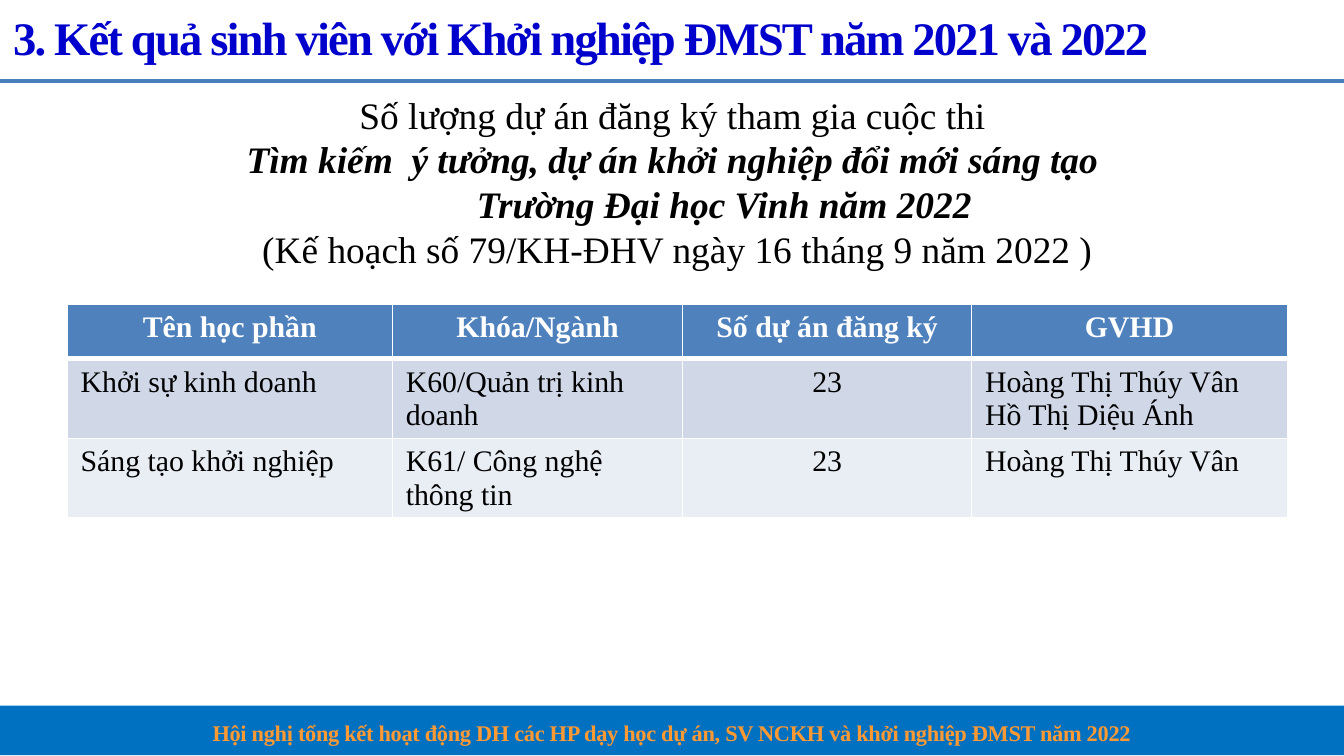
from dataclasses import dataclass

from lxml.etree import SubElement
from pptx import Presentation
from pptx.dml.color import RGBColor
from pptx.enum.shapes import MSO_CONNECTOR, MSO_SHAPE
from pptx.enum.text import MSO_ANCHOR, PP_ALIGN
from pptx.oxml.ns import qn
from pptx.util import Inches, Pt


@dataclass(frozen=True)
class Theme:
    font: str = "Times New Roman"
    title: str = "0000CC"
    rule: str = "4B7EBC"
    band: str = "0070C0"
    footer: str = "FF9933"
    ink: str = "000000"
    white: str = "FFFFFF"
    header: str = "4F81BD"
    stripes: tuple = ("D0D8E8", "E9EDF4")
    title_size: float = 25
    intro_size: float = 20
    table_size: float = 16
    footer_size: float = 12


class SlideBuilder:
    def __init__(self, slide, theme):
        self.slide = slide
        self.theme = theme

    def style(self, paragraph, size, color, bold=False, italic=False, spacing=0):
        for run in paragraph.runs:
            font = run.font
            font.name, font.size = self.theme.font, Pt(size)
            font.bold, font.italic = bold, italic
            font.color.rgb = RGBColor.from_string(color)
            if spacing:
                run._r.get_or_add_rPr().set("spc", str(round(spacing * 100)))

    def band(self, left, top, width, height, color):
        band = self.slide.shapes.add_shape(
            MSO_SHAPE.RECTANGLE, Inches(left), Inches(top), Inches(width), Inches(height))
        band.shadow.inherit = False
        band.fill.solid()
        band.fill.fore_color.rgb = RGBColor.from_string(color)
        band.line.fill.background()

    def rule(self, left, right, y, color, weight):
        rule = self.slide.shapes.add_connector(
            MSO_CONNECTOR.STRAIGHT, Inches(left), Inches(y), Inches(right), Inches(y))
        rule.line.color.rgb = RGBColor.from_string(color)
        rule.line.width = Pt(weight)
        SubElement(rule._element.spPr, qn("a:effectLst"))

    def text(self, box, lines, size, color, align=PP_ALIGN.LEFT,
             anchor=MSO_ANCHOR.MIDDLE, line_spacing=1.0, spacing=0):
        """Each line is (wording, emphasised, left margin in inches)."""
        frame = self.slide.shapes.add_textbox(*map(Inches, box)).text_frame
        frame.word_wrap = True
        frame.vertical_anchor = anchor
        frame.text = "\n".join(wording for wording, _, _ in lines)
        for paragraph, (_, emphasis, margin) in zip(frame.paragraphs, lines):
            paragraph.alignment = align
            paragraph.line_spacing = line_spacing
            if margin:
                paragraph._p.get_or_add_pPr().set("marL", str(Inches(margin)))
            bold, italic = "b" in emphasis, "i" in emphasis
            self.style(paragraph, size, color, bold, italic, spacing)

    def border(self, cell, bottom):
        properties = cell._tc.get_or_add_tcPr()
        weights = {"a:lnL": 1, "a:lnR": 1, "a:lnT": 1, "a:lnB": bottom}
        for position, (side, weight) in enumerate(weights.items()):
            edge = SubElement(properties, qn(side), w=str(Pt(weight)))
            fill = SubElement(edge, qn("a:solidFill"))
            SubElement(fill, qn("a:srgbClr"), val=self.theme.white)
            properties.insert(position, edge)

    def table(self, left, top, widths, row_height, rows, centred_columns):
        theme = self.theme
        table = self.slide.shapes.add_table(
            len(rows), len(widths), Inches(left), Inches(top),
            Inches(sum(widths)), Inches(row_height * len(rows))).table
        for column, width in zip(table.columns, widths):
            column.width = Inches(width)
        for r, row in enumerate(rows):
            is_header = r == 0
            fill = theme.header if is_header else theme.stripes[(r - 1) % 2]
            color = theme.white if is_header else theme.ink
            for c, wording in enumerate(row):
                cell = table.cell(r, c)
                cell.text_frame.text = wording
                cell.margin_bottom = Inches(0.01)
                cell.fill.solid()
                cell.fill.fore_color.rgb = RGBColor.from_string(fill)
                self.border(cell, bottom=3 if is_header else 1)
                centred = is_header or c in centred_columns
                for paragraph in cell.text_frame.paragraphs:
                    paragraph.alignment = PP_ALIGN.CENTER if centred else PP_ALIGN.LEFT
                    self.style(paragraph, theme.table_size, color, bold=is_header)


def main():
    theme = Theme()
    deck = Presentation()
    deck.slide_width = Inches(10)
    deck.slide_height = deck.slide_width * 9 // 16
    builder = SlideBuilder(deck.slides.add_slide(deck.slide_layouts[6]), theme)

    # Footer band and title rule
    builder.band(0, 5.25, 10, 0.37, theme.band)
    builder.rule(0, 10, 0.6, theme.rule, 2)

    # Footer
    builder.text(
        (0, 5.27, 10, 0.32),
        [("Hội nghị tổng kết hoạt động DH các HP dạy học dự án, SV NCKH "
          "và khởi nghiệp ĐMST năm 2022", "b", 0)],
        theme.footer_size, theme.footer, PP_ALIGN.CENTER, MSO_ANCHOR.TOP,
        line_spacing=1.15, spacing=-0.16)

    # Title
    builder.text(
        (0, 0.02, 10, 0.51),
        [("3. Kết quả sinh viên với Khởi nghiệp ĐMST năm 2021 và 2022", "b", 0)],
        theme.title_size, theme.title, spacing=-1)

    # Registered projects
    builder.table(
        0.5, 2.26, [2.42, 2.16, 2.15, 2.35], 0.41,
        [("Tên học phần", "Khóa/Ngành", "Số dự án đăng ký", "GVHD"),
         ("Khởi sự kinh doanh", "K60/Quản trị kinh doanh", "23",
          "Hoàng Thị Thúy Vân\nHồ Thị Diệu Ánh"),
         ("Sáng tạo khởi nghiệp", "K61/ Công nghệ thông tin", "23",
          "Hoàng Thị Thúy Vân")],
        centred_columns={2})

    # Contest introduction
    builder.text(
        (0.33, 0.81, 9.42, 1.08),
        [("Số lượng dự án đăng ký tham gia cuộc thi ", "", 0),
         ("Tìm kiếm  ý tưởng, dự án khởi nghiệp đổi mới sáng tạo ", "bi", 0),
         ("Trường Đại học Vinh năm 2022", "bi", 0.7),
         ("(Kế hoạch số 79/KH-ĐHV ngày 16 tháng 9 năm 2022 )", "", 0)],
        theme.intro_size, theme.ink, PP_ALIGN.CENTER)

    deck.save("out.pptx")


if __name__ == "__main__":
    main()
